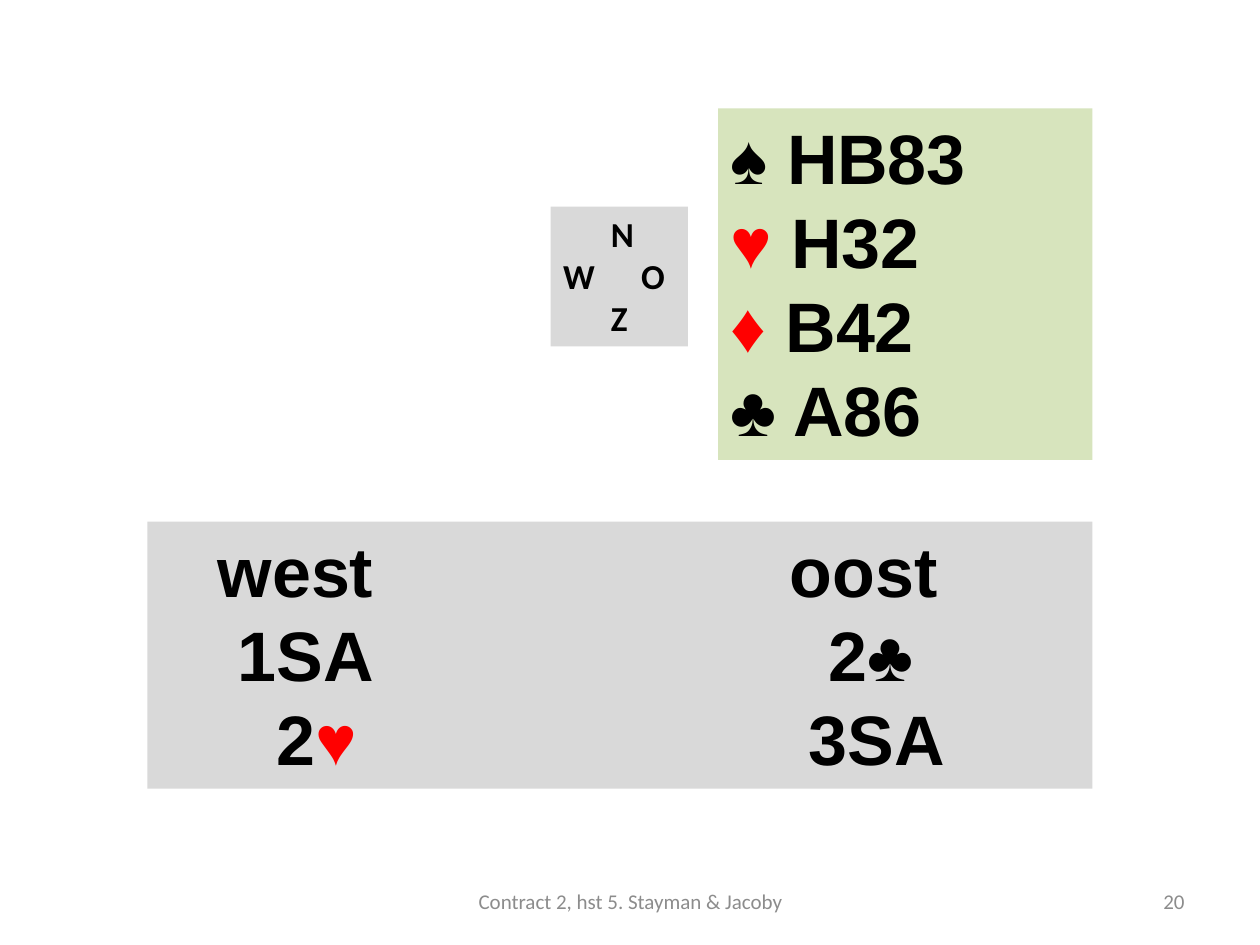
from itertools import groupby

from lxml.etree import SubElement
from pptx import Presentation
from pptx.dml.color import RGBColor
from pptx.enum.shapes import MSO_SHAPE as Shape
from pptx.enum.text import MSO_ANCHOR as Anchor, MSO_AUTO_SIZE as AutoSize, PP_ALIGN as Align
from pptx.oxml.ns import qn
from pptx.util import Inches, Pt

BLACK = RGBColor(0x00, 0x00, 0x00)
RED = RGBColor(0xFF, 0x00, 0x00)
GREEN = RGBColor(0xD7, 0xE4, 0xBD)
GREY = RGBColor(0xD9, 0xD9, 0xD9)
FOOTER_GREY = RGBColor(0x8C, 0x8C, 0x8C)

CARD_FONT = {"name": "Arial", "size": Pt(40), "bold": True}
COMPASS_FONT = {"name": "Calibri", "size": Pt(20), "bold": True}
FOOTER_FONT = {"name": "Calibri", "size": Pt(12), "bold": False}

HAND = [("♠ HB83", ()), ("♥ H32", ()), ("♦ B42", ()), ("♣ A86", ())]
COMPASS = [("\tN", (0.38,)), ("W\tO", (0.62,)), ("\tZ", (0.38,))]
BIDDING = [
    ("\twest\toost", (0.46, 5)),
    ("\t1SA\t2♣", (0.62, 5.31)),
    ("\t2♥\t3SA", (0.93, 5.15)),
]


def add_runs(paragraph, text, font_format, color):
    for is_red, letters in groupby(text, lambda letter: letter in "♥♦"):
        run = paragraph.add_run()
        run.text = "".join(letters)
        for name, value in font_format.items():
            setattr(run.font, name, value)
        run.font.color.rgb = RED if is_red else color


def set_tab_stops(paragraph, positions):
    tab_list = SubElement(paragraph._p.get_or_add_pPr(), qn("a:tabLst"))
    for position in positions:
        SubElement(tab_list, qn("a:tab"), pos=str(Inches(position)), algn="l")


def add_panel(slide, box, fill_color, lines, font_format):
    shape = slide.shapes.add_shape(Shape.RECTANGLE, *map(Inches, box))
    shape.shadow.inherit = False
    shape.fill.solid()
    shape.fill.fore_color.rgb = fill_color
    shape.line.fill.background()
    frame = shape.text_frame
    frame_format = {
        "word_wrap": True,
        "vertical_anchor": Anchor.TOP,
        "auto_size": AutoSize.SHAPE_TO_FIT_TEXT,
    }
    for name, value in frame_format.items():
        setattr(frame, name, value)
    for index, (text, tab_stops) in enumerate(lines):
        paragraph = frame.add_paragraph() if index else frame.paragraphs[0]
        paragraph.alignment = Align.LEFT
        if tab_stops:
            set_tab_stops(paragraph, tab_stops)
        add_runs(paragraph, text, font_format, BLACK)


def add_footer(slide, box, text, alignment):
    frame = slide.shapes.add_textbox(*map(Inches, box)).text_frame
    frame.word_wrap = True
    frame.vertical_anchor = Anchor.MIDDLE
    paragraph = frame.paragraphs[0]
    paragraph.alignment = alignment
    add_runs(paragraph, text, FOOTER_FONT, FOOTER_GREY)


def main():
    presentation = Presentation()
    presentation.slide_width = Inches(10)
    presentation.slide_height = Inches(7.5)
    slide = presentation.slides.add_slide(presentation.slide_layouts[6])
    add_panel(slide, (5.7, 0.86, 2.97, 2.79), GREEN, HAND, CARD_FONT)
    add_panel(slide, (4.37, 1.64, 1.09, 1.11), GREY, COMPASS, COMPASS_FONT)
    add_panel(slide, (1.17, 4.14, 7.5, 2.12), GREY, BIDDING, CARD_FONT)
    add_footer(slide, (7.17, 6.95, 2.33, 0.4), "20", Align.RIGHT)
    add_footer(slide, (3.42, 6.95, 3.17, 0.4), "Contract 2, hst 5. Stayman & Jacoby", Align.CENTER)
    presentation.save("out.pptx")


if __name__ == "__main__":
    main()
